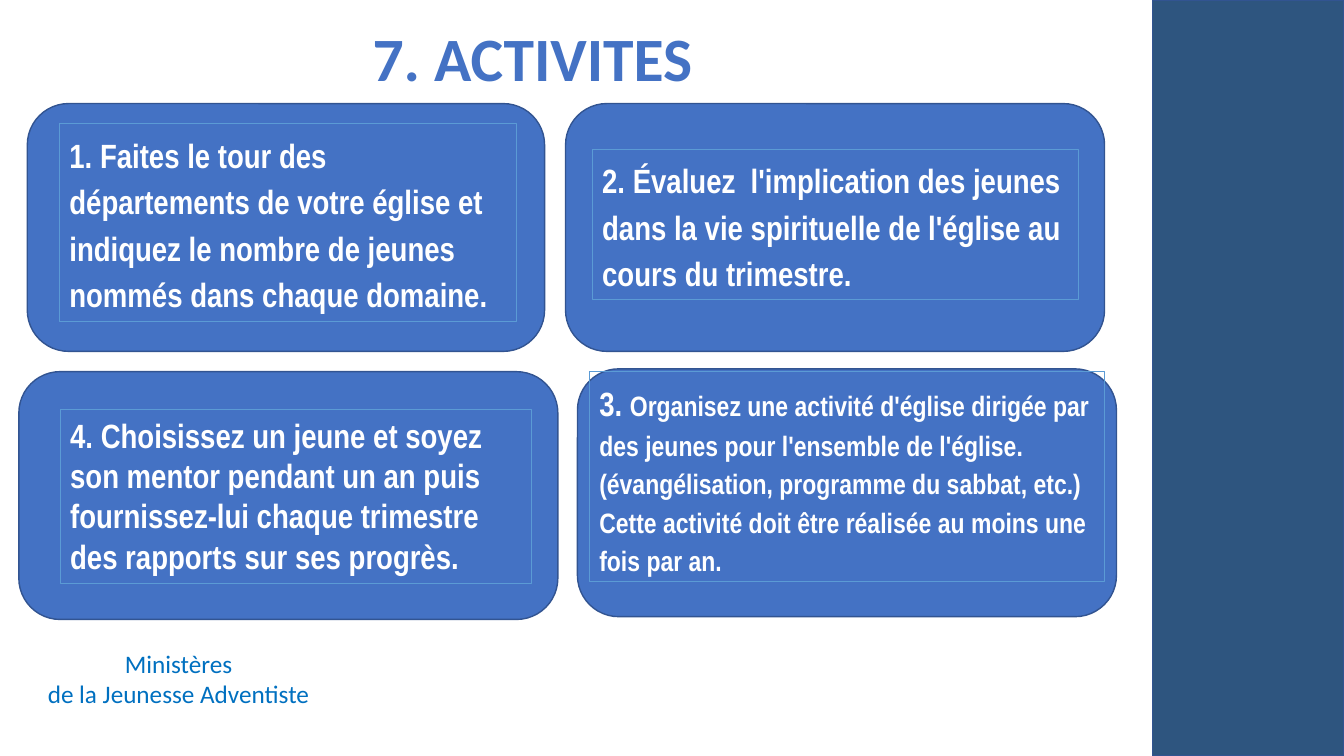
from dataclasses import dataclass

from pptx import Presentation
from pptx.dml.color import RGBColor
from pptx.enum.shapes import MSO_SHAPE
from pptx.enum.text import MSO_ANCHOR, PP_ALIGN
from pptx.util import Pt


@dataclass(frozen=True)
class Theme:
    band: RGBColor = RGBColor(0x2E, 0x55, 0x7F)
    card: RGBColor = RGBColor(0x44, 0x72, 0xC4)
    edge: RGBColor = RGBColor(0x32, 0x54, 0x91)
    frame: RGBColor = RGBColor(0x5B, 0x9B, 0xD5)
    ministry: RGBColor = RGBColor(0x00, 0x70, 0xC0)
    white: RGBColor = RGBColor(0xFF, 0xFF, 0xFF)
    heading_font: str = "Calibri"
    activity_font: str = "Arial Narrow"
    title_size: int = 44
    activity_size: int = 24
    detail_size: int = 20
    ministry_size: int = 18


THEME = Theme()
CARD_HEIGHT = 177

# Card left, top, width; frame left, top, width, height; line spacing; runs
ACTIVITIES = [
    ((19.5, 74, 369.5), (42.5, 88.5, 326.5, 141), 1.15,
     [("1. Faites le tour des départements de votre église et indiquez "
       "le nombre de jeunes nommés dans chaque domaine.", THEME.activity_size)]),
    ((404, 74, 385), (423, 106.5, 347.5, 107.5), 1.15,
     [("2. Évaluez  l'implication des jeunes dans la vie spirituelle "
       "de l'église au cours du trimestre.", THEME.activity_size)]),
    ((412.5, 263.5, 385), (421, 265.5, 368, 150), 1.15,
     [("3. ", THEME.activity_size),
      ("Organisez une activité d'église dirigée par des jeunes pour "
       "l'ensemble de l'église. (évangélisation, programme du sabbat, etc.) "
       "Cette activité doit être réalisée au moins une fois par an.",
       THEME.detail_size)]),
    ((13.5, 265.5, 385), (43, 292.5, 336.5, 124), 1,
     [("4. Choisissez un jeune et soyez son mentor pendant un an puis "
       "fournissez-lui chaque trimestre des rapports sur ses progrès.",
       THEME.activity_size)]),
]


def add_panel(slide, kind, box, fill, line, line_width):
    """Add a preset shape; a fill of None leaves it see-through."""
    panel = slide.shapes.add_shape(kind, *map(Pt, box))
    panel.shadow.inherit = False
    if fill is None:
        panel.fill.background()
    else:
        panel.fill.solid()
        panel.fill.fore_color.rgb = fill
    panel.line.color.rgb = line
    panel.line.width = Pt(line_width)
    return panel


def write(holder, paragraphs, *, font, color, bold=False, spacing=1,
          align=PP_ALIGN.LEFT, anchor=MSO_ANCHOR.TOP):
    """Fill a shape with paragraphs, each a list of (text, size) runs."""
    frame = holder.text_frame
    frame.word_wrap = True
    frame.vertical_anchor = anchor
    for index, runs in enumerate(paragraphs):
        paragraph = frame.add_paragraph() if index else frame.paragraphs[0]
        paragraph.alignment = align
        paragraph.line_spacing = spacing
        for text, size in runs:
            run = paragraph.add_run()
            run.text = text
            run.font.name = font
            run.font.size = Pt(size)
            run.font.bold = bold
            run.font.color.rgb = color


def add_label(slide, box, paragraphs, **text_format):
    label = slide.shapes.add_textbox(*map(Pt, box))
    write(label, paragraphs, font=THEME.heading_font, **text_format)


def add_card(slide, place):
    add_panel(slide, MSO_SHAPE.FLOWCHART_ALTERNATE_PROCESS,
              (*place, CARD_HEIGHT), THEME.card, THEME.edge, 1)


def add_activity(slide, box, spacing, runs):
    activity = add_panel(slide, MSO_SHAPE.RECTANGLE, box, None, THEME.frame, 0.5)
    write(activity, [runs], font=THEME.activity_font, color=THEME.white,
          bold=True, spacing=spacing)


def main():
    deck = Presentation()
    deck.slide_width, deck.slide_height = Pt(960), Pt(540)
    slide = deck.slides.add_slide(deck.slide_layouts[6])

    add_panel(slide, MSO_SHAPE.RECTANGLE, (823, 0, 137, 540),
              THEME.band, THEME.edge, 1)
    add_label(slide, (259, 13.5, 278, 60.5),
              [[("7. ACTIVITES", THEME.title_size)]], color=THEME.card,
              bold=True, spacing=0.9, anchor=MSO_ANCHOR.MIDDLE)
    for card, frame, spacing, runs in ACTIVITIES:
        add_card(slide, card)
        add_activity(slide, frame, spacing, runs)
    add_label(slide, (18.5, 459.5, 218, 51),
              [[("Ministères", THEME.ministry_size)],
               [("de la Jeunesse Adventiste", THEME.ministry_size)]],
              color=THEME.ministry, align=PP_ALIGN.CENTER)

    deck.save("out.pptx")


if __name__ == "__main__":
    main()
